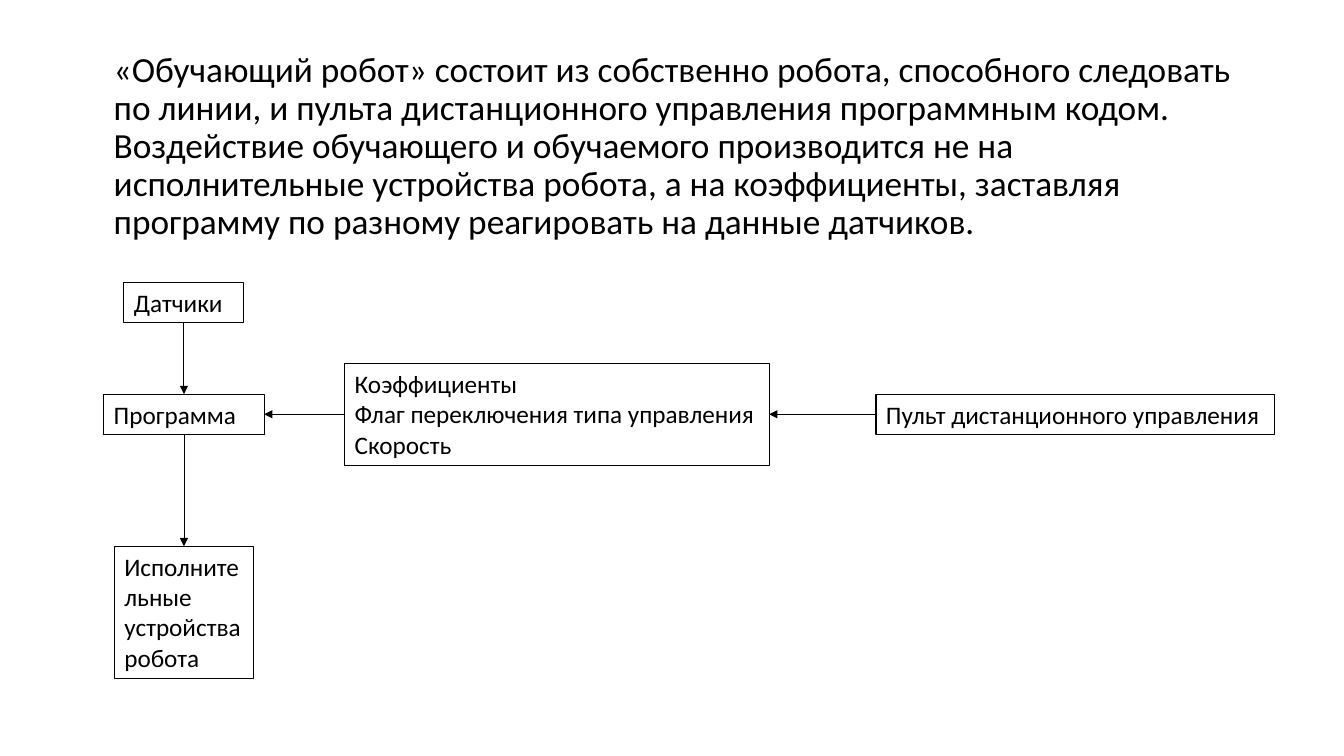
import pptx
import pptx.util
import pptx.dml.color
import pptx.enum.shapes
import pptx.enum.text
import pptx.oxml.ns
import lxml.etree

COLORS = {"ink": "000000"}
CELL = 0.1  # grid cell in inches; the slide has 133.33 columns and 75 rows
COLUMNS, ROWS = 133.33, 75
ROBOT_COLUMN = 18.25  # centre of the vertical chain
PROGRAM_ROW = 41.1  # centre of the horizontal chain
SITES = {"top": 0, "left": 1, "bottom": 2, "right": 3}

INTRO = (
    "«Обучающий робот» состоит из собственно робота, способного следовать по линии, "
    "и пульта дистанционного управления программным кодом. Воздействие обучающего и "
    "обучаемого производится не на исполнительные устройства робота, а на коэффициенты, "
    "заставляя программу по разному реагировать на данные датчиков."
)

# name: (centre column, centre row, columns, rows, wrap, lines)
BLOCKS = {
    "sensors": (ROBOT_COLUMN, 30, 11.9, 4, True, ["Датчики"]),
    "program": (ROBOT_COLUMN, PROGRAM_ROW, 15.9, 4, True, ["Программа"]),
    "settings": (55.25, PROGRAM_ROW, 42.1, 10.1, False,
                 ["Коэффициенты", "Флаг переключения типа управления", "Скорость"]),
    "remote": (106.65, PROGRAM_ROW, 39.5, 4, False, ["Пульт дистанционного управления"]),
    "actuators": (ROBOT_COLUMN, 60.75, 13.8, 13.1, True,
                  ["Исполнительные устройства робота"]),
}

# start block, its side, end block, its side, line width in points
ARROWS = [
    ("sensors", "bottom", "program", "top", 0.75),
    ("program", "bottom", "actuators", "top", 0.5),
    ("settings", "left", "program", "right", 0.5),
    ("remote", "left", "settings", "right", 0.5),
]


def grid(*cells):
    return [pptx.util.Inches(cell * CELL) for cell in cells]


def color(name):
    return pptx.dml.color.RGBColor.from_string(COLORS[name])


def apply_format(target, values):
    for name, value in values.items():
        setattr(target, name, value)


def write_lines(frame, lines, size, spacing=1.0):
    for index, line in enumerate(lines):
        para = frame.paragraphs[0] if index == 0 else frame.add_paragraph()
        apply_format(para, {
            "alignment": pptx.enum.text.PP_ALIGN.LEFT,
            "line_spacing": spacing,
        })
        span = para.add_run()
        span.text = line
        apply_format(span.font, {"name": "Calibri", "size": pptx.util.Pt(size)})
        span.font.color.rgb = color("ink")


def draw_outline(line, width):
    line.color.rgb = color("ink")
    line.width = pptx.util.Pt(width)


def add_intro(page):
    box = page.shapes.add_textbox(*grid(10.3, 3.9, 115, 21.4))
    apply_format(box.text_frame, {
        "word_wrap": True,
        "vertical_anchor": pptx.enum.text.MSO_ANCHOR.MIDDLE,
    })
    write_lines(box.text_frame, [INTRO], 25.2, 0.9)


def add_block(page, column, row, width, height, wrap, lines):
    box = page.shapes.add_shape(
        pptx.enum.shapes.MSO_SHAPE.RECTANGLE,
        *grid(column - width / 2, row - height / 2, width, height))
    box.shadow.inherit = False
    box.fill.background()
    draw_outline(box.line, 0.75)
    apply_format(box.text_frame, {
        "word_wrap": wrap,
        "auto_size": pptx.enum.text.MSO_AUTO_SIZE.SHAPE_TO_FIT_TEXT,
        "vertical_anchor": pptx.enum.text.MSO_ANCHOR.TOP,
    })
    write_lines(box.text_frame, lines, 18)
    return box


def add_arrow(page, start, start_side, end, end_side, width):
    arrow = page.shapes.add_connector(
        pptx.enum.shapes.MSO_CONNECTOR.STRAIGHT, 0, 0, 0, 0)
    arrow.begin_connect(start, SITES[start_side])
    arrow.end_connect(end, SITES[end_side])
    draw_outline(arrow.line, width)
    qn = pptx.oxml.ns.qn
    properties = arrow._element.spPr
    lxml.etree.SubElement(properties.find(qn("a:ln")), qn("a:tailEnd"), type="triangle")
    lxml.etree.SubElement(properties, qn("a:effectLst"))


def main():
    deck = pptx.Presentation()
    deck.slide_width, deck.slide_height = grid(COLUMNS, ROWS)
    page = deck.slides.add_slide(deck.slide_layouts[6])
    add_intro(page)
    blocks = {name: add_block(page, *values) for name, values in BLOCKS.items()}
    for start, start_side, end, end_side, width in ARROWS:
        add_arrow(page, blocks[start], start_side, blocks[end], end_side, width)
    deck.save("out.pptx")


if __name__ == "__main__":
    main()
